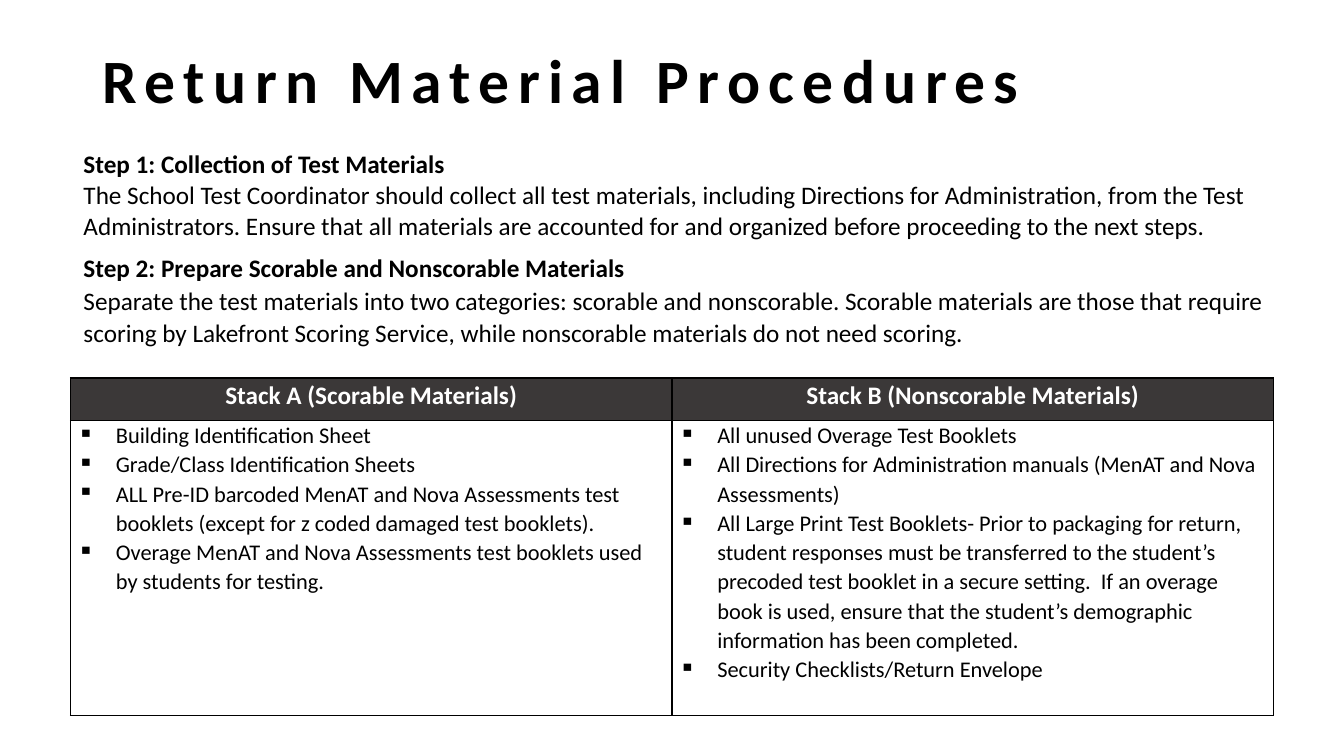
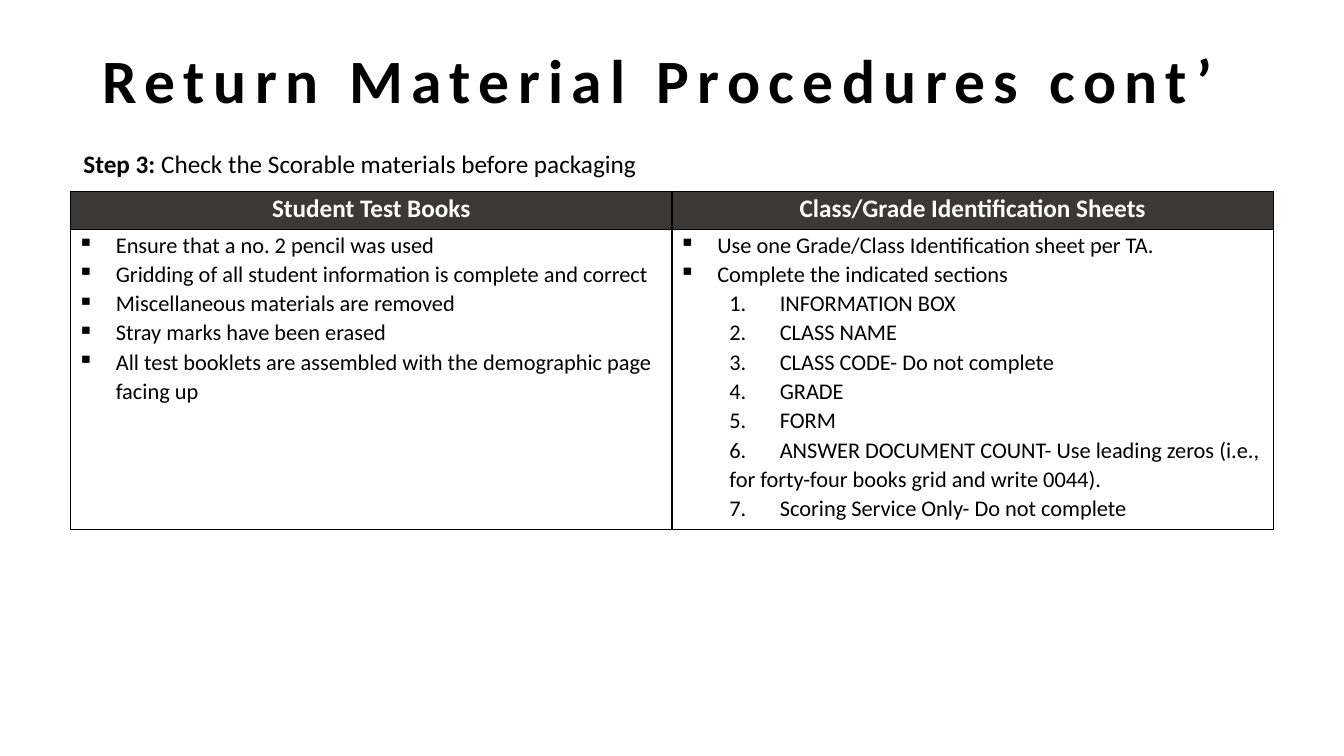
from lxml import etree
from pptx import Presentation
from pptx.dml.color import RGBColor
from pptx.enum.text import MSO_ANCHOR, MSO_AUTO_SIZE, PP_ALIGN
from pptx.oxml.ns import qn
from pptx.util import Inches, Pt

LEFT, CENTER = PP_ALIGN.LEFT, PP_ALIGN.CENTER
MIDDLE = MSO_ANCHOR.MIDDLE
NO_FIT, GROW = MSO_AUTO_SIZE.NONE, MSO_AUTO_SIZE.SHAPE_TO_FIT_TEXT

COLORS = {"ink": "000000", "header": "3B3838", "light": "FFFFFF"}
FONT = "Calibri"
WIDTH, HEIGHT = 13.33, 7.5
TITLE_BOX = (0.92, 0.4, 11.5, 0.85)
STEPS_LEFT, STEPS_TOP, STEPS_WIDTH = 0.67, 1.42, 11.96
TABLE_LEFT, TABLE_WIDTH, TABLE_HEIGHT = 0.7, 11.93, 3.35

PARAGRAPHS = {
    "step": {"indent": (0.06, 0)},
    "header": {"alignment": CENTER, "line_spacing": 1.07},
    "bullet": {"indent": (0.38, -0.38), "line_spacing": 1.07, "mark": "▪"},
    "number": {"indent": (0.5, 0), "line_spacing": 1.07, "level": 1},
}

SLIDES = [
    {
        "title": "Return Material Procedures",
        "steps_height": 2.08,
        "steps": [
            ([("Step 1: Collection of Test Materials", True)], 1.02, 0),
            ([("The School Test Coordinator should collect all test materials, including Directions for "
               "Administration, from the Test Administrators. Ensure that all materials are accounted for "
               "and organized before proceeding to the next steps.", False)], 1.02, 7.2),
            ([("Step 2: Prepare Scorable and Nonscorable Materials", True)], 1.07, 0),
            ([("Separate the test materials into two categories: scorable and nonscorable. Scorable "
               "materials are those that require scoring by Lakefront Scoring Service, while nonscorable "
               "materials do not need scoring.", False)], 1.07, 8),
        ],
        "table_top": 3.75,
        "header_height": 0.42,
        "columns": [
            {"head": "Stack A (Scorable Materials)",
             "bullets": [
                 "Building Identification Sheet",
                 "Grade/Class Identification Sheets",
                 "ALL Pre-ID barcoded MenAT and Nova Assessments test booklets (except for z coded damaged "
                 "test booklets).",
                 "Overage MenAT and Nova Assessments test booklets used by students for testing."]},
            {"head": "Stack B (Nonscorable Materials)",
             "bullets": [
                 "All unused Overage Test Booklets",
                 "All Directions for Administration manuals (MenAT and Nova Assessments)",
                 "All Large Print Test Booklets- Prior to packaging for return, student responses must be "
                 "transferred to the student’s precoded test booklet in a secure setting.  If an overage "
                 "book is used, ensure that the student’s demographic information has been completed.",
                 "Security Checklists/Return Envelope"]},
        ],
    },
    {
        "title": "Return Material Procedures cont’",
        "steps_height": 0.4,
        "steps": [
            ([("Step 3: ", True), ("Check the Scorable materials before packaging", False)], 1.02, 0),
        ],
        "table_top": 1.9,
        "header_height": 0.38,
        "columns": [
            {"head": "Student Test Books",
             "bullets": [
                 "Ensure that a no. 2 pencil was used",
                 "Gridding of all student information is complete and correct",
                 "Miscellaneous materials are removed",
                 "Stray marks have been erased",
                 "All test booklets are assembled with the demographic page facing up"]},
            {"head": "Class/Grade Identification Sheets",
             "bullets": [
                 "Use one Grade/Class Identification sheet per TA.",
                 "Complete the indicated sections"],
             "numbers": [
                 "INFORMATION BOX",
                 "CLASS NAME",
                 "CLASS CODE- Do not complete",
                 "GRADE",
                 "FORM",
                 "ANSWER DOCUMENT COUNT- Use leading zeros (i.e., for forty-four books grid and write 0044).",
                 "Scoring Service Only- Do not complete"]},
        ],
    },
]


def set_all(obj, values):
    for name, value in values.items():
        setattr(obj, name, value)


def add_run(p, text, size, bold=False, color="ink"):
    r = p.add_run()
    r.text = text
    set_all(r.font, {"name": FONT, "size": Pt(size), "bold": bold})
    r.font.color.rgb = RGBColor.from_string(COLORS[color])
    return r


def format_paragraph(p, kind, **extra):
    values = {**PARAGRAPHS[kind], **extra}
    margin, first = values.pop("indent", (0, 0))
    mark = values.pop("mark", None)
    set_all(p, values)
    pPr = p._p.get_or_add_pPr()
    pPr.set("marL", str(Inches(margin)))
    pPr.set("indent", str(Inches(first)))
    if mark:
        etree.SubElement(pPr, qn("a:buChar")).set("char", mark)


def fill_paragraphs(tf, items):
    for i, (kind, runs, extra) in enumerate(items):
        p = tf.add_paragraph() if i else tf.paragraphs[0]
        format_paragraph(p, kind, **extra)
        for run in runs:
            add_run(p, *run)


def add_title(slide, text):
    sp = slide.shapes.title
    set_all(sp, dict(zip(("left", "top", "width", "height"), map(Inches, TITLE_BOX))))
    tf = sp.text_frame
    set_all(tf, {"vertical_anchor": MIDDLE, "auto_size": NO_FIT, "word_wrap": True})
    p = tf.paragraphs[0]
    set_all(p, {"alignment": LEFT, "line_spacing": 0.9})
    r = add_run(p, text, 44, True)
    r.font._element.set("spc", "600")


def add_steps(slide, steps, height):
    box = map(Inches, (STEPS_LEFT, STEPS_TOP, STEPS_WIDTH, height))
    tf = slide.shapes.add_textbox(*box).text_frame
    set_all(tf, {"word_wrap": True, "auto_size": GROW})
    fill_paragraphs(tf, [
        ("step", [(text, 18, bold) for text, bold in runs],
         {"line_spacing": spacing, "space_after": Pt(after)})
        for runs, spacing, after in steps])


def add_borders(cell):
    tcPr = cell._tc.get_or_add_tcPr()
    for i, side in enumerate("LRTB"):
        ln = etree.Element(qn(f"a:ln{side}"), w=str(Pt(1)))
        fill = etree.SubElement(ln, qn("a:solidFill"))
        etree.SubElement(fill, qn("a:srgbClr")).set("val", COLORS["ink"])
        tcPr.insert(i, ln)


def fill_cell(cell, items, fill=None):
    set_all(cell, {"margin_left": Inches(0.07), "margin_right": Inches(0.07),
                   "margin_top": 0, "margin_bottom": 0})
    if fill:
        cell.fill.solid()
        cell.fill.fore_color.rgb = RGBColor.from_string(COLORS[fill])
    else:
        cell.fill.background()
    add_borders(cell)
    fill_paragraphs(cell.text_frame, items)


def add_materials_table(slide, columns, top, header_height):
    box = map(Inches, (TABLE_LEFT, top, TABLE_WIDTH, TABLE_HEIGHT))
    table = slide.shapes.add_table(2, len(columns), *box).table
    set_all(table, {"first_row": False, "horz_banding": False})
    table.rows[0].height = Inches(header_height)
    table.rows[1].height = Inches(TABLE_HEIGHT - header_height)
    for i, column in enumerate(columns):
        table.columns[i].width = Inches(TABLE_WIDTH / len(columns))
        head = [("header", [(column["head"], 18, True, "light")], {})]
        body = [("bullet", [(text, 16)], {}) for text in column["bullets"]]
        body += [("number", [(f"{n}.\t{text}", 16)], {})
                 for n, text in enumerate(column.get("numbers", []), 1)]
        fill_cell(table.cell(0, i), head, "header")
        fill_cell(table.cell(1, i), body)


def main():
    """Build the return material procedure slides."""
    prs = Presentation()
    set_all(prs, {"slide_width": Inches(WIDTH), "slide_height": Inches(HEIGHT)})
    for content in SLIDES:
        slide = prs.slides.add_slide(prs.slide_layouts[5])
        add_title(slide, content["title"])
        add_steps(slide, content["steps"], content["steps_height"])
        add_materials_table(slide, content["columns"], content["table_top"], content["header_height"])
    prs.save("out.pptx")


if __name__ == "__main__":
    main()
